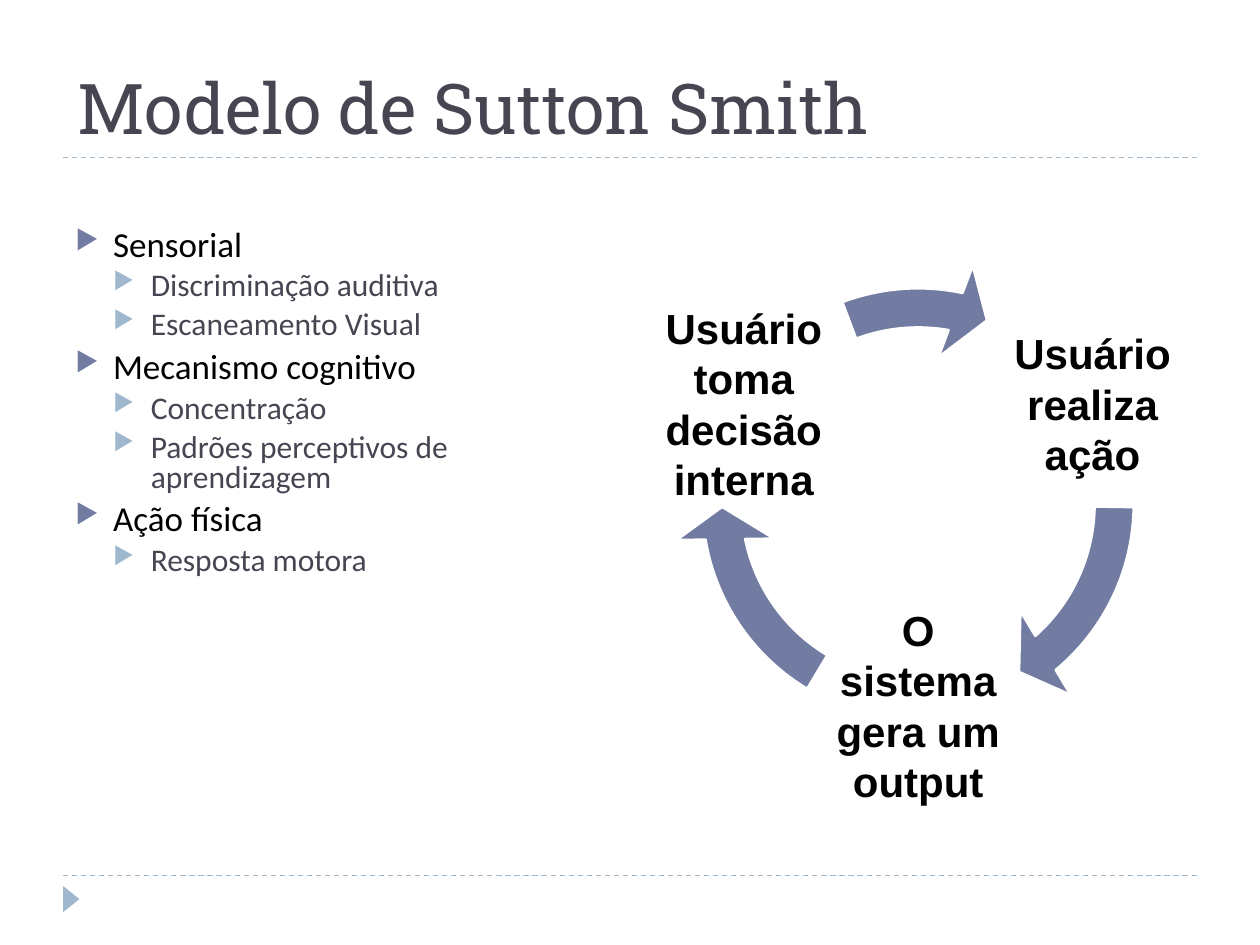
import math

import lxml.etree
import pptx
import pptx.dml.color
import pptx.enum.dml
import pptx.enum.shapes
import pptx.enum.text
import pptx.oxml.ns
import pptx.util

Cm = pptx.util.Cm
Pt = pptx.util.Pt
qn = pptx.oxml.ns.qn
COLORS = {"heading": "464653", "text": "000000", "accent": "727CA3", "light": "9FB8CD", "white": "FFFFFF"}


def color(name):
    return pptx.dml.color.RGBColor.from_string(COLORS[name])


def format_runs(paragraph, font_name, size, color_name, bold=False):
    for run in paragraph.runs:
        run.font.name = font_name
        run.font.size = Pt(size)
        run.font.bold = bold
        run.font.color.rgb = color(color_name)


presentation = pptx.Presentation()
presentation.slide_width = Cm(25.4)
presentation.slide_height = Cm(19.05)
slide = presentation.slides.add_slide(presentation.slide_layouts[5])

for line_top in (17.65, 3.17):
    rule = slide.shapes.add_connector(
        pptx.enum.shapes.MSO_CONNECTOR.STRAIGHT, Cm(1.27), Cm(line_top), Cm(24.13), Cm(line_top)
    )
    rule.line.color.rgb = color("light")
    rule.line.width = Pt(0.75)
    rule.line.dash_style = pptx.enum.dml.MSO_LINE.DASH
    lxml.etree.SubElement(rule._element.spPr, qn("a:effectLst"))

marker = slide.shapes.add_shape(
    pptx.enum.shapes.MSO_SHAPE.ISOSCELES_TRIANGLE, Cm(1.17), Cm(17.96), Cm(0.53), Cm(0.33)
)
marker.rotation = 90
marker.shadow.inherit = False
marker.fill.solid()
marker.fill.fore_color.rgb = color("light")
marker.line.fill.background()

title = slide.shapes.title
title.left, title.top, title.width, title.height = Cm(1.3), Cm(1.12), Cm(22.83), Cm(2)
title.text_frame.text = "Modelo de Sutton Smith"
title.text_frame.vertical_anchor = pptx.enum.text.MSO_ANCHOR.BOTTOM
title_paragraph = title.text_frame.paragraphs[0]
title_paragraph.alignment = pptx.enum.text.PP_ALIGN.LEFT
format_runs(title_paragraph, "Roboto Slab", 40, "heading")

outline = [
    (0, "Sensorial"),
    (1, "Discriminação auditiva"),
    (1, "Escaneamento Visual"),
    (0, "Mecanismo cognitivo"),
    (1, "Concentração"),
    (1, "Padrões perceptivos de aprendizagem"),
    (0, "Ação física"),
    (1, "Resposta motora"),
]
level_styles = [(20, "text", "accent", 6), (18, "heading", "light", 5)]
body = slide.shapes.add_textbox(Cm(1.27), Cm(4.52), Cm(11.23), Cm(12.5))
body.text_frame.word_wrap = True
body.text_frame.text = "\n".join(text for level, text in outline)
for paragraph, (level, text) in zip(body.text_frame.paragraphs, outline):
    size, text_color, bullet_color, space_before = level_styles[level]
    paragraph.level = level
    paragraph.line_spacing = 0.8
    paragraph.space_before = Pt(space_before)
    format_runs(paragraph, "Calibri", size, text_color)
    properties = paragraph._p.get_or_add_pPr()
    properties.set("marL", str(Cm(0.76 * (level + 1))))
    properties.set("indent", str(-Cm(0.76)))
    bullet_fill = lxml.etree.SubElement(properties, qn("a:buClr"))
    lxml.etree.SubElement(bullet_fill, qn("a:srgbClr"), val=COLORS[bullet_color])
    lxml.etree.SubElement(properties, qn("a:buSzPct"), val="76000")
    lxml.etree.SubElement(properties, qn("a:buChar"), char="▶")

center_x, center_y, radius = 18.51, 10.16, 4.06
box_size, arrow_size = 4.19, 9.88
cycle_steps = [
    ("Usuário realiza ação", -30, 29.67, 0.5),
    ("O sistema gera um output", 90, 101.75, 72.58),
    ("Usuário toma decisão interna", 210, 168.6, 149.65),
]
for text, angle, arrow_end, arrow_start in cycle_steps:
    box_left = center_x + radius * math.cos(math.radians(angle)) - box_size / 2
    box_top = center_y + radius * math.sin(math.radians(angle)) - box_size / 2
    box = slide.shapes.add_textbox(Cm(box_left), Cm(box_top), Cm(box_size), Cm(box_size))
    frame = box.text_frame
    frame.word_wrap = True
    frame.vertical_anchor = pptx.enum.text.MSO_ANCHOR.MIDDLE
    frame.margin_left = frame.margin_right = frame.margin_top = frame.margin_bottom = Cm(0.08)
    frame.text = text
    frame.paragraphs[0].alignment = pptx.enum.text.PP_ALIGN.CENTER
    format_runs(frame.paragraphs[0], "Arial", 24, "text", bold=True)

    arrow = slide.shapes.add_shape(
        pptx.enum.shapes.MSO_SHAPE.CIRCULAR_ARROW,
        Cm(center_x - arrow_size / 2), Cm(center_y - arrow_size / 2), Cm(arrow_size), Cm(arrow_size),
    )
    for index, value in enumerate((0.08, 5.75, arrow_end, arrow_start, 0.1)):
        arrow.adjustments[index] = value
    arrow.shadow.inherit = False
    arrow.fill.solid()
    arrow.fill.fore_color.rgb = color("accent")
    arrow.line.color.rgb = color("white")
    arrow.line.width = Pt(1.5)

presentation.save("out.pptx")
